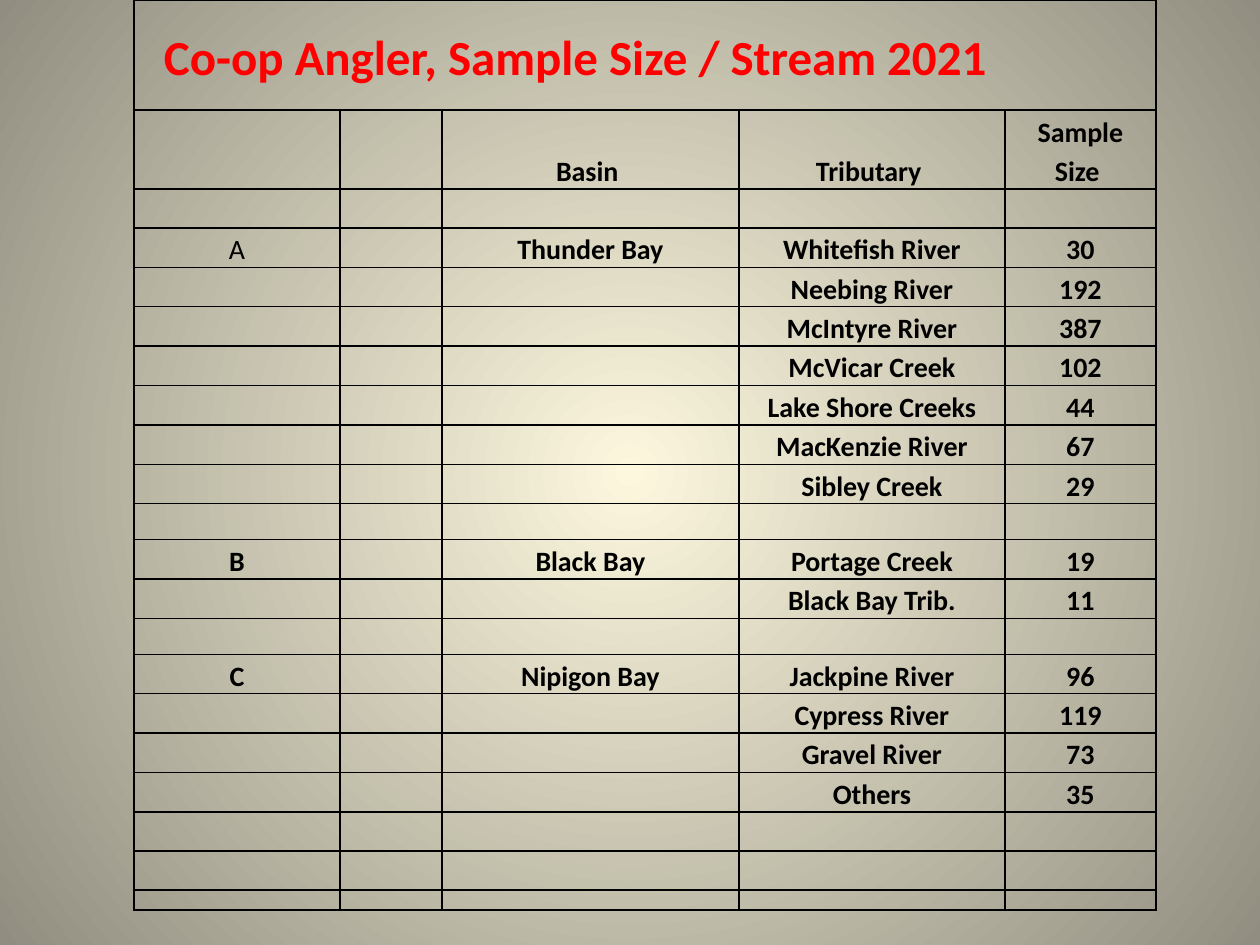
from dataclasses import dataclass

from lxml.etree import SubElement
from pptx import Presentation
from pptx.dml.color import RGBColor
from pptx.enum.text import MSO_ANCHOR as Anchor, PP_ALIGN as Align
from pptx.oxml import parse_xml
from pptx.oxml.ns import nsdecls, qn
from pptx.util import Pt

PX = 914400 // 126
BLACK = RGBColor(0x00, 0x00, 0x00)
RED = RGBColor(0xFF, 0x00, 0x00)
GLOW = RGBColor(0xFC, 0xF7, 0xDD)
EDGE = RGBColor(0x91, 0x8E, 0x81)
FONT = "Calibri"
COLUMNS = (206, 102, 297, 266, 151)
LAST_COLUMN = len(COLUMNS) - 1
TITLE_ROW, SPACER_ROW, HEADER_ROW = 0, 1, 2
ROW, GAP, FOOT = 39, 36, 20


@dataclass(frozen=True)
class Basin:
    letter: str
    name: str
    samples: tuple[tuple[str, int], ...]
    bold_letter: bool = True


BASINS = (
    Basin("A", "Thunder Bay", (
        ("Whitefish River", 30), ("Neebing River", 192),
        ("McIntyre River", 387), ("McVicar Creek", 102),
        ("Lake Shore Creeks", 44), ("MacKenzie River", 67),
        ("Sibley Creek", 29),
    ), bold_letter=False),
    Basin("B", "Black Bay", (("Portage Creek", 19), ("Black Bay Trib.", 11))),
    Basin("C", "Nipigon Bay", (
        ("Jackpine River", 96), ("Cypress River", 119),
        ("Gravel River", 73), ("Others", 35),
    )),
)


def write(cell, text: str, *, size: int = 16, color: RGBColor = BLACK,
          bold: bool = True, align: Align = Align.CENTER, left: int = 10) -> None:
    cell.margin_left = left * PX
    para = cell.text_frame.paragraphs[0]
    para.alignment = align
    para.line_spacing = 1.15
    span = para.add_run()
    span.text = text
    span.font.name = FONT
    span.font.size = Pt(size)
    span.font.bold = bold
    span.font.color.rgb = color


def draw_borders(cell, visible: set[str]) -> None:
    props = cell._tc.get_or_add_tcPr()
    for index, side in enumerate("LRTB"):
        line = SubElement(props, qn(f"a:ln{side}"), w=str(Pt(1)))
        props.insert(index, line)
        if side in visible:
            fill = SubElement(line, qn("a:solidFill"))
            SubElement(fill, qn("a:srgbClr"), val=str(BLACK))
        else:
            SubElement(line, qn("a:noFill"))


def visible_sides(row: int, column: int) -> set[str]:
    if row > SPACER_ROW:
        return set("LRTB")
    sides = {"T"} if row == TITLE_ROW else {"B"}
    if column == 0:
        sides.add("L")
    if column == LAST_COLUMN:
        sides.add("R")
    return sides


def prepare_cell(cell, row: int, column: int) -> None:
    cell.fill.background()
    cell.vertical_anchor = Anchor.BOTTOM
    cell.margin_left = cell.margin_right = 10 * PX
    cell.margin_top = cell.margin_bottom = 0
    cell.text_frame.paragraphs[0].font.size = Pt(8)
    draw_borders(cell, visible_sides(row, column))


def row_heights() -> list[int]:
    heights = [89, 21, 79, ROW]
    for basin in BASINS:
        heights += [ROW] * len(basin.samples) + [GAP]
    heights[-1] = ROW
    return heights + [ROW, FOOT]


def add_sample_table(page) -> None:
    heights = row_heights()
    table = page.shapes.add_table(
        len(heights), len(COLUMNS), 134 * PX, 0,
        sum(COLUMNS) * PX, sum(heights) * PX).table
    table.first_row = table.horz_banding = False
    for column, width in zip(table.columns, COLUMNS):
        column.width = width * PX
    for row, height in enumerate(heights):
        table.rows[row].height = height * PX
        for column in range(len(COLUMNS)):
            prepare_cell(table.cell(row, column), row, column)

    title = table.cell(TITLE_ROW, 0)
    title.merge(table.cell(TITLE_ROW, LAST_COLUMN - 1))
    write(title, "Co-op Angler, Sample Size / Stream 2021",
          size=28, color=RED, align=Align.LEFT, left=30)
    for column, heading in enumerate(("Basin ", "Tributary ", "Sample Size "), 2):
        write(table.cell(HEADER_ROW, column), heading)

    row = HEADER_ROW + 2
    for basin in BASINS:
        write(table.cell(row, 0), basin.letter, bold=basin.bold_letter)
        write(table.cell(row, 2), basin.name)
        for tributary, count in basin.samples:
            write(table.cell(row, 3), tributary)
            write(table.cell(row, 4), str(count))
            row += 1
        row += 1


def paint_background(page) -> None:
    page.element.cSld.insert(0, parse_xml(
        f'<p:bg {nsdecls("p", "a")}><p:bgPr><a:gradFill rotWithShape="1"><a:gsLst>'
        f'<a:gs pos="0"><a:srgbClr val="{GLOW}"/></a:gs>'
        f'<a:gs pos="100000"><a:srgbClr val="{EDGE}"/></a:gs></a:gsLst>'
        '<a:path path="circle">'
        '<a:fillToRect l="50000" t="50000" r="50000" b="50000"/></a:path>'
        '</a:gradFill><a:effectLst/></p:bgPr></p:bg>'))


def main() -> None:
    deck = Presentation()
    deck.slide_width, deck.slide_height = 1260 * PX, 945 * PX
    page = deck.slides.add_slide(deck.slide_layouts[6])
    paint_background(page)
    add_sample_table(page)
    deck.save("out.pptx")


if __name__ == "__main__":
    main()
